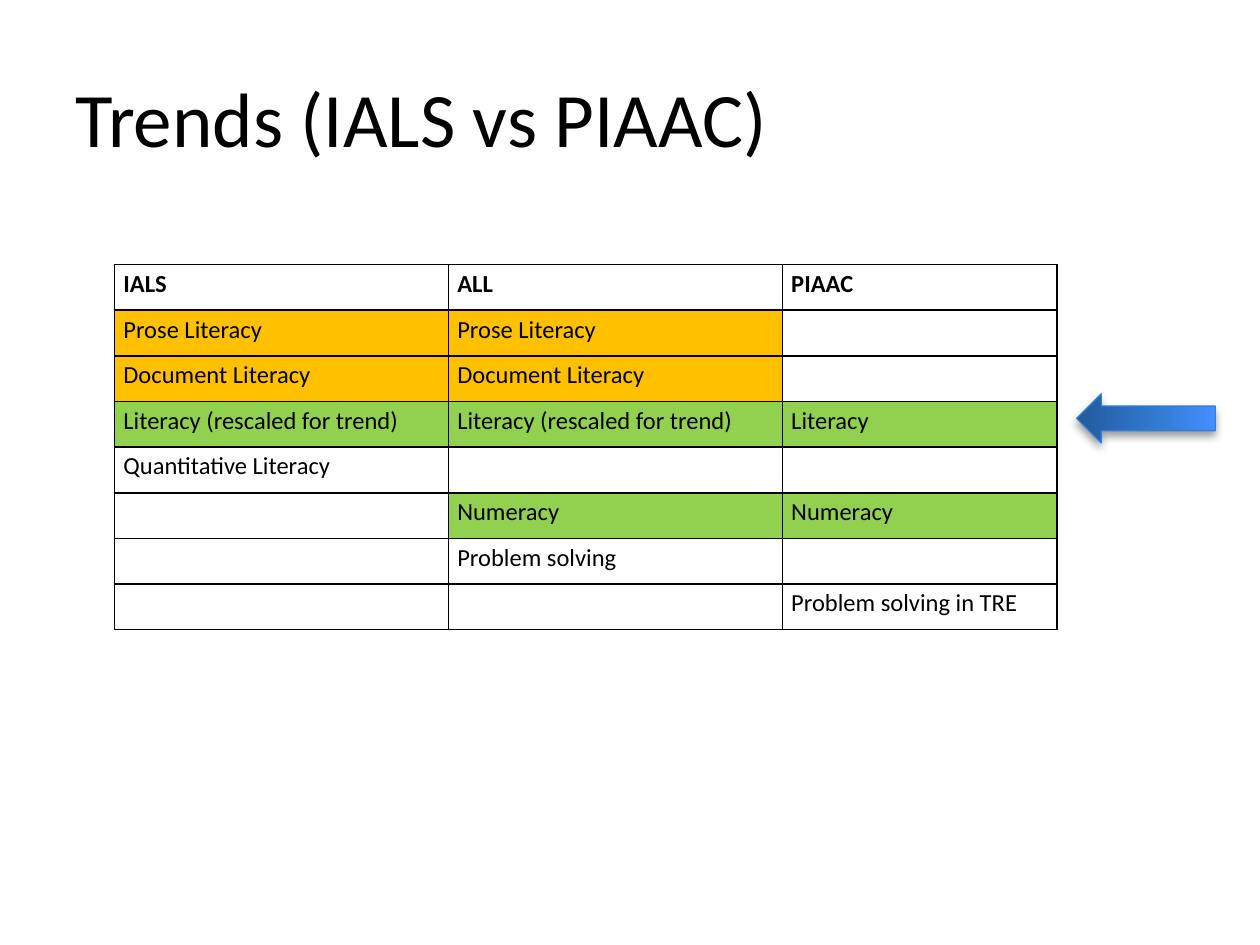
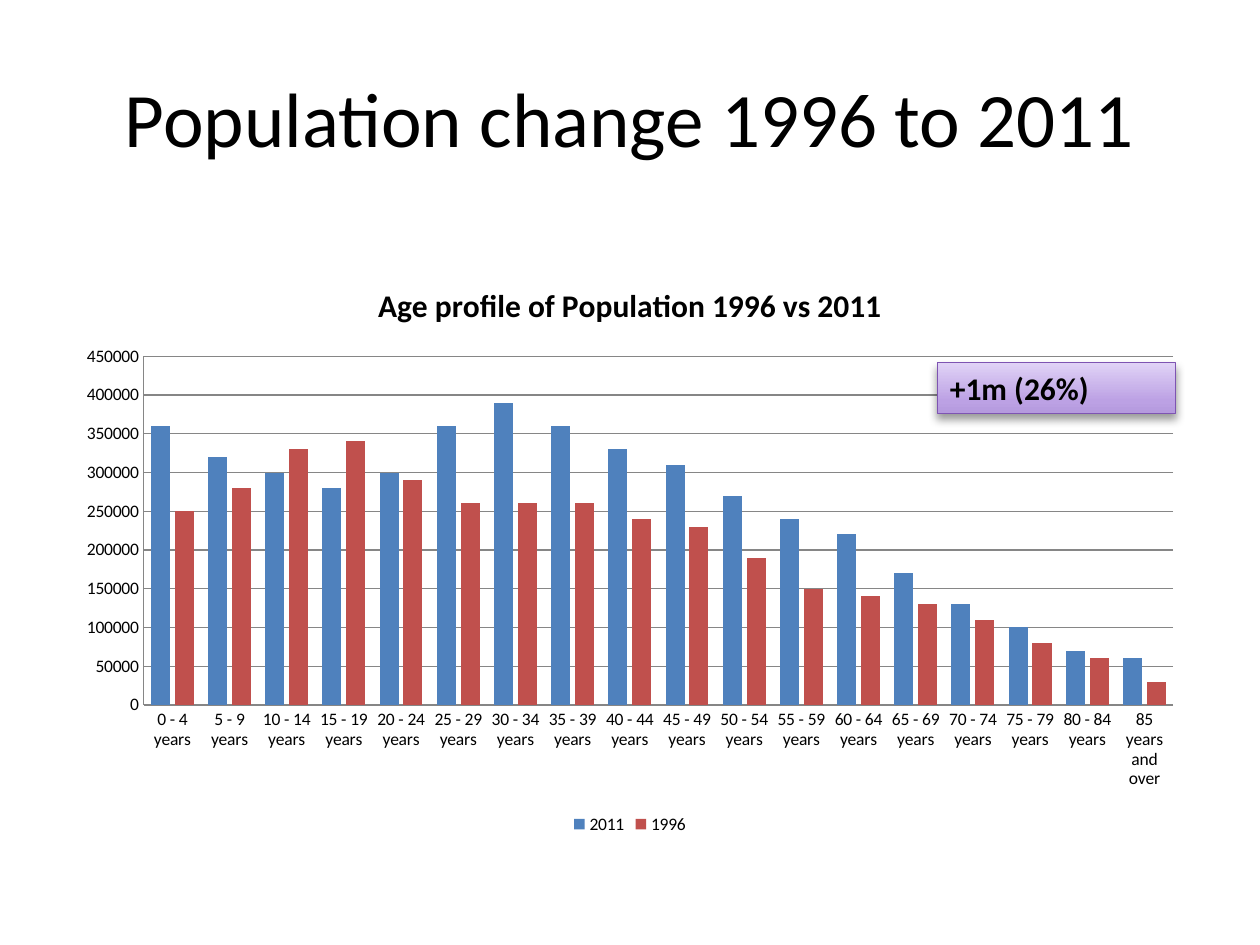
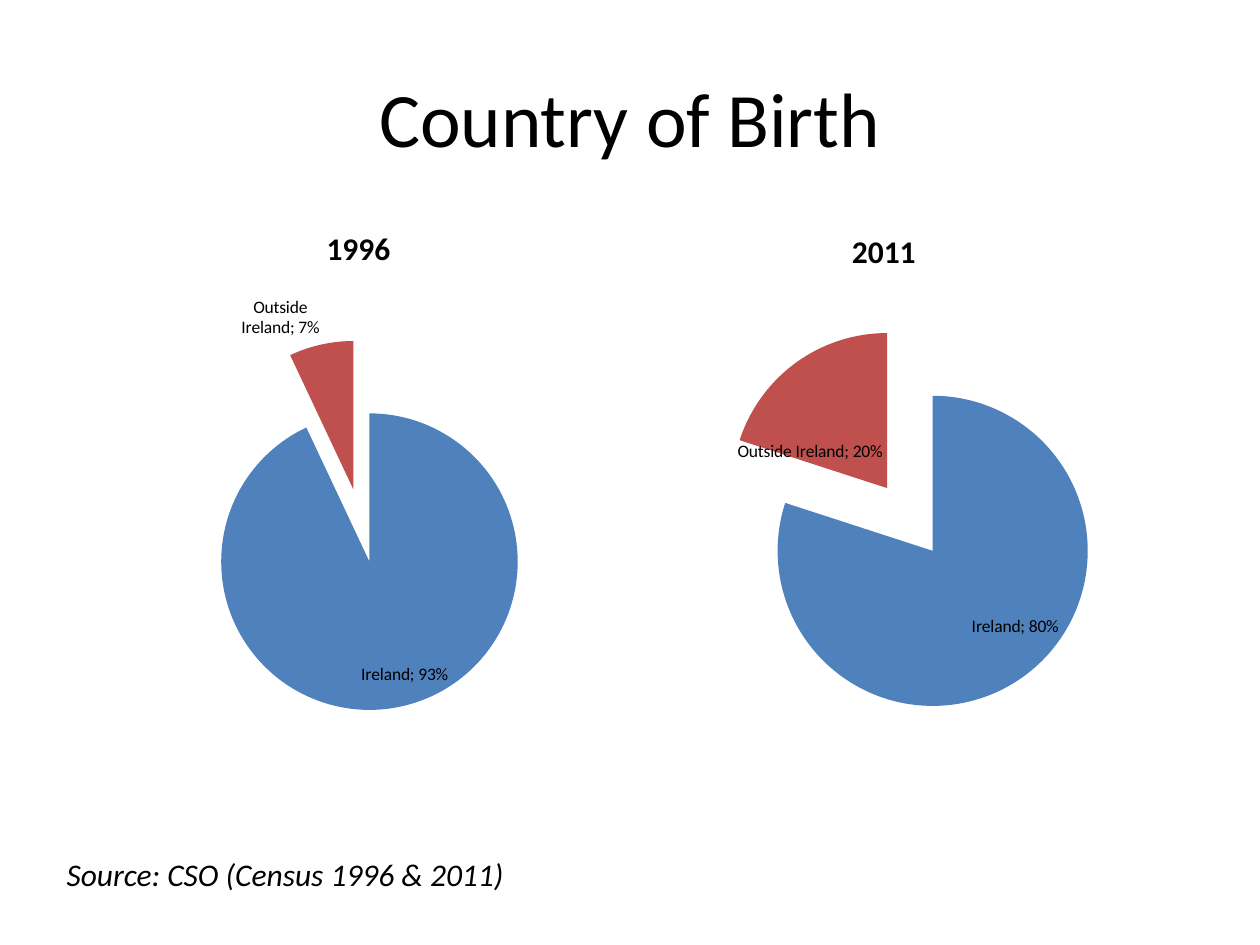
"""Build three slides on literacy survey trends, population change and country of birth."""
import pptx
import pptx.chart.data
import pptx.dml.color
import pptx.enum.chart
import pptx.enum.shapes
import pptx.enum.text
import pptx.oxml
import pptx.oxml.ns
import pptx.util
from pptx.dml.color import RGBColor
from pptx.util import Inches

FONT = "Calibri"
BLACK = RGBColor(0x00, 0x00, 0x00)
GRID_GREY = RGBColor(0x86, 0x86, 0x86)
BLUE = RGBColor(0x4F, 0x81, 0xBD)
RED = RGBColor(0xC0, 0x50, 0x4D)
AMBER = RGBColor(0xFF, 0xC0, 0x00)
GREEN = RGBColor(0x92, 0xD0, 0x50)
ARROW_LINE = RGBColor(0x33, 0x7E, 0xD9)
ARROW_STOPS = [
    (0, RGBColor(0x22, 0x59, 0x9B)),
    (60, RGBColor(0x32, 0x7C, 0xD4)),
    (100, RGBColor(0x44, 0x8E, 0xFF)),
]
CALLOUT_LINE = RGBColor(0x7E, 0x54, 0xB2)
CALLOUT_STOPS = [
    (0, RGBColor(0xB5, 0x9A, 0xDE)),
    (25, RGBColor(0xBC, 0xA1, 0xE4)),
    (100, RGBColor(0xE0, 0xD3, 0xF6)),
]
ALIGN = pptx.enum.text.PP_ALIGN
ANCHOR = pptx.enum.text.MSO_ANCHOR
CHART_TYPE = pptx.enum.chart.XL_CHART_TYPE
NAMESPACE = pptx.oxml.ns.nsdecls("a")


def write_text(frame, text, size, align=ALIGN.LEFT, bold=False, italic=False):
    """Write one styled run into the first paragraph and return the paragraph."""
    frame.word_wrap = True
    para = frame.paragraphs[0]
    para.alignment = align
    span = para.add_run()
    span.text = text
    span.font.name = FONT
    span.font.size = pptx.util.Pt(size)
    span.font.bold = bold
    span.font.italic = italic
    span.font.color.rgb = BLACK
    return para


def add_glossy_shape(page, kind, place, stops, line_color):
    """Add a shape with an upward gradient, a thin outline and a soft shadow."""
    shape = page.shapes.add_shape(kind, *map(Inches, place))
    shape.fill.gradient()
    shape.fill.gradient_angle = 90
    stop_list = shape.element.spPr.find(".//" + pptx.oxml.ns.qn("a:gsLst"))
    for stop in list(stop_list):
        stop_list.remove(stop)
    for position, color in stops:
        stop_list.append(pptx.oxml.parse_xml(
            f'<a:gs {NAMESPACE} pos="{position * 1000}"><a:srgbClr val="{color}"/></a:gs>'))
    shape.line.color.rgb = line_color
    shape.line.width = pptx.util.Pt(0.75)
    shape.shadow.inherit = False
    shape.element.spPr.find(pptx.oxml.ns.qn("a:effectLst")).append(pptx.oxml.parse_xml(
        f'<a:outerShdw {NAMESPACE} blurRad="66040" dist="38100" dir="5400000" rotWithShape="0">'
        '<a:srgbClr val="000000"><a:alpha val="40000"/></a:srgbClr></a:outerShdw>'))
    return shape


deck = pptx.Presentation()
deck.slide_width = Inches(10)
deck.slide_height = Inches(7.5)

pages = []
for heading, align in [
    ("Trends (IALS vs PIAAC)", ALIGN.LEFT),
    ("Population change 1996 to 2011", ALIGN.CENTER),
    ("Country of Birth", ALIGN.CENTER),
]:
    page = deck.slides.add_slide(deck.slide_layouts[6])
    box = page.shapes.add_textbox(Inches(0.5), Inches(0.3), Inches(9), Inches(1.25))
    box.text_frame.vertical_anchor = ANCHOR.MIDDLE
    write_text(box.text_frame, heading, 44, align)
    pages.append(page)
trends_page, population_page, birth_page = pages

survey_rows = [
    [("IALS", None), ("ALL", None), ("PIAAC", None)],
    [("Prose Literacy", AMBER), ("Prose Literacy", AMBER), ("", None)],
    [("Document Literacy", AMBER), ("Document Literacy", AMBER), ("", None)],
    [("Literacy (rescaled for trend)", GREEN), ("Literacy (rescaled for trend)", GREEN), ("Literacy", GREEN)],
    [("Quantitative Literacy", None), ("", None), ("", None)],
    [("", None), ("Numeracy", GREEN), ("Numeracy", GREEN)],
    [("", None), ("Problem solving", None), ("", None)],
    [("", None), ("", None), ("Problem solving in TRE", None)],
]
table = trends_page.shapes.add_table(
    len(survey_rows), 3, Inches(0.91), Inches(2.1), Inches(7.48), Inches(2.9)).table
table.first_row = False
table.horz_banding = False
for column, width in zip(table.columns, [2.65, 2.65, 2.18]):
    column.width = Inches(width)
for row_index, row in enumerate(survey_rows):
    for column_index, (text, color) in enumerate(row):
        cell = table.cell(row_index, column_index)
        cell.margin_left = cell.margin_right = Inches(0.07)
        cell.margin_top = cell.margin_bottom = 0
        if text:
            para = write_text(cell.text_frame, text, 14, bold=row_index == 0)
            para.line_spacing = 1.15
        cell_properties = cell._tc.get_or_add_tcPr()
        for side in ["lnL", "lnR", "lnT", "lnB"]:
            cell_properties.append(pptx.oxml.parse_xml(
                f'<a:{side} {NAMESPACE} w="12700"><a:solidFill>'
                f'<a:srgbClr val="{BLACK}"/></a:solidFill></a:{side}>'))
        if color is None:
            cell.fill.background()
        else:
            cell.fill.solid()
            cell.fill.fore_color.rgb = color

arrow = add_glossy_shape(
    trends_page, pptx.enum.shapes.MSO_SHAPE.DOWN_ARROW, (8.9, 2.77, 0.39, 1.1), ARROW_STOPS, ARROW_LINE)
arrow.rotation = 90

age_data = pptx.chart.data.CategoryChartData()
age_data.categories = [f"{age} - {age + 4} years" for age in range(0, 85, 5)] + ["85 years and over"]
age_data.add_series("2011", [
    360000, 320000, 300000, 280000, 300000, 360000, 390000, 360000, 330000,
    310000, 270000, 240000, 220000, 170000, 130000, 100000, 70000, 60000])
age_data.add_series("1996", [
    250000, 280000, 330000, 340000, 290000, 260000, 260000, 260000, 240000,
    230000, 190000, 150000, 140000, 130000, 110000, 80000, 60000, 30000])
age_chart = population_page.shapes.add_chart(
    CHART_TYPE.COLUMN_CLUSTERED, Inches(0.51), Inches(2.06), Inches(8.98), Inches(4.6), age_data).chart
age_plot = age_chart.plots[0]
age_plot.gap_width = 75
age_plot.overlap = -25
for series, color in zip(age_plot.series, [BLUE, RED]):
    series.format.fill.solid()
    series.format.fill.fore_color.rgb = color
for axis in [age_chart.category_axis, age_chart.value_axis]:
    axis.major_tick_mark = pptx.enum.chart.XL_TICK_MARK.NONE
    axis.format.line.color.rgb = GRID_GREY
age_chart.value_axis.maximum_scale = 450000
age_chart.value_axis.minimum_scale = 0
age_chart.value_axis.major_unit = 50000
age_chart.value_axis.major_gridlines.format.line.color.rgb = GRID_GREY
age_chart.has_legend = True
age_chart.legend.position = pptx.enum.chart.XL_LEGEND_POSITION.BOTTOM
age_chart.legend.include_in_layout = False
titled_charts = [(age_chart, "Age profile of Population 1996 vs 2011")]

callout = add_glossy_shape(
    population_page, pptx.enum.shapes.MSO_SHAPE.RECTANGLE, (7.44, 2.88, 1.89, 0.4),
    CALLOUT_STOPS, CALLOUT_LINE)
write_text(callout.text_frame, "+1m (26%)", 18, bold=True)

source_box = birth_page.shapes.add_textbox(Inches(0.43), Inches(6.74), Inches(5.2), Inches(0.4))
write_text(source_box.text_frame, "Source: CSO (Census 1996 & 2011)", 18, italic=True)

for year, shares, left, top, width in [
    ("1996", (0.93, 0.07), 0.83, 1.62, 4.03),
    ("2011", (0.8, 0.2), 4.86, 1.64, 4.31),
]:
    birth_data = pptx.chart.data.CategoryChartData(number_format="0%")
    birth_data.categories = ["Ireland", "Outside Ireland"]
    birth_data.add_series(year, shares)
    pie_chart = birth_page.shapes.add_chart(
        CHART_TYPE.PIE, Inches(left), Inches(top), Inches(width), Inches(4.16), birth_data).chart
    pie_chart.has_legend = False
    pie_plot = pie_chart.plots[0]
    pie_series = pie_plot.series[0]
    for index, color in enumerate([BLUE, RED]):
        fill = pie_series.points[index].format.fill
        fill.solid()
        fill.fore_color.rgb = color
    explosion = pptx.oxml.parse_xml(f'<c:explosion {pptx.oxml.ns.nsdecls("c")} val="25"/>')
    pie_series._element.find(pptx.oxml.ns.qn("c:dPt")).addprevious(explosion)
    labels = pie_series.data_labels
    labels.show_category_name = True
    labels.show_value = True
    labels.show_percentage = False
    labels.number_format = "0%"
    labels.number_format_is_linked = False
    labels.position = pptx.enum.chart.XL_LABEL_POSITION.BEST_FIT
    labels._element.find(pptx.oxml.ns.qn("c:showBubbleSize")).addnext(
        pptx.oxml.parse_xml(f'<c:separator {pptx.oxml.ns.nsdecls("c")}>; </c:separator>'))
    titled_charts.append((pie_chart, year))

for chart, title in titled_charts:
    chart.font.name = FONT
    chart.font.size = pptx.util.Pt(10)
    chart.font.color.rgb = BLACK
    chart.has_title = True
    write_text(chart.chart_title.text_frame, title, 18, ALIGN.CENTER, bold=True)
    chart.chart_title.include_in_layout = False
    chart.plots[0].vary_by_categories = chart is not age_chart

deck.save("out.pptx")
